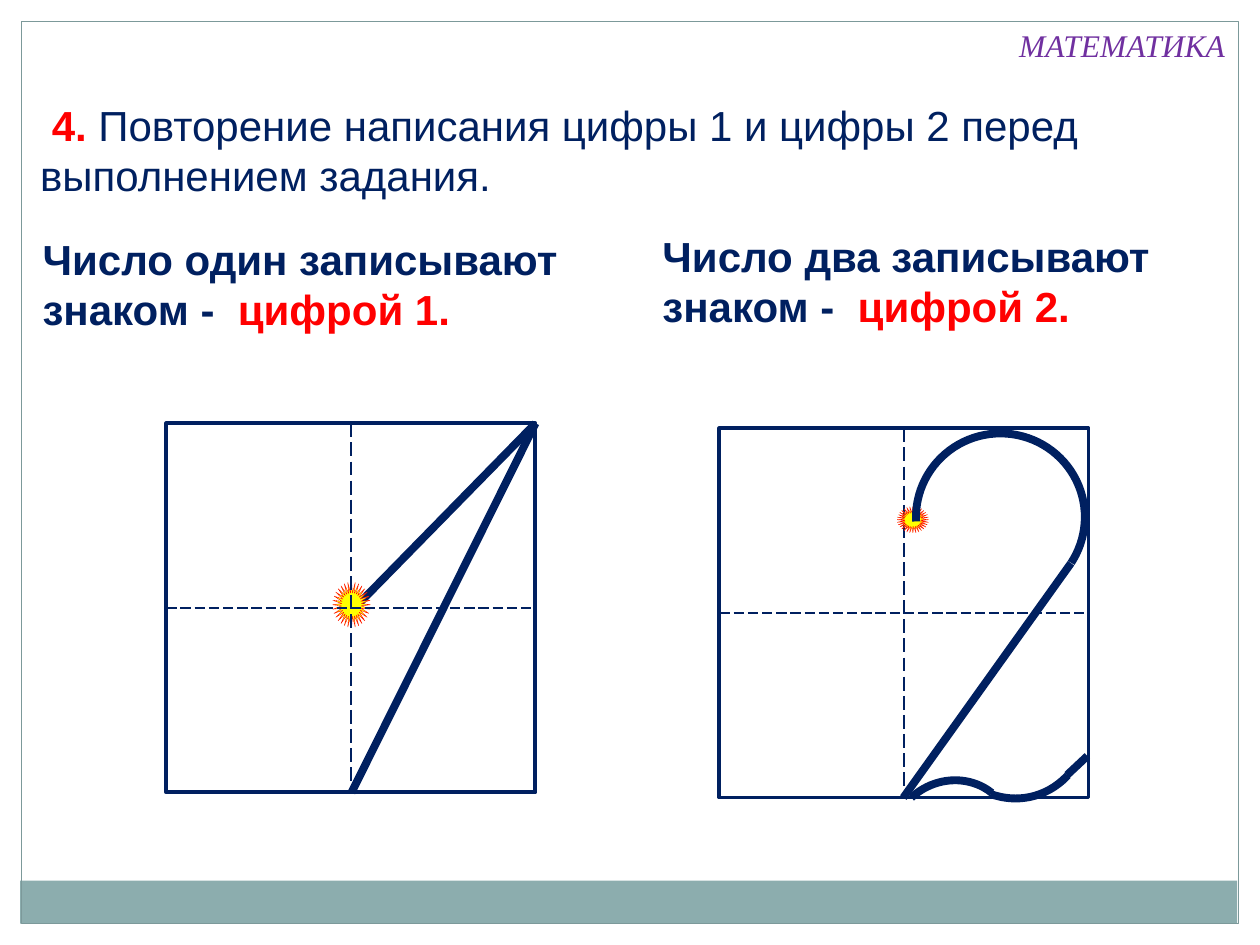
from pptx import Presentation
from pptx import util as u
from pptx.dml.color import RGBColor
from pptx.enum import dml, shapes, text
from pptx.oxml.ns import qn
from lxml import etree

COLS, ROWS = 100, 75
NAVY, RED, YELLOW, PURPLE = "002060", "FF0000", "FFFF00", "7030A0"
WHITE, TEAL, GREY = "FFFFFF", "8CADAE", "7C999A"
SHAPE = shapes.MSO_SHAPE
SIDE = 29.3  # side of a writing square


def rgb(value):
    return RGBColor.from_string(value)


def add_run(p, words, font="Arial", size=24, color=NAVY, bold=False, italic=False):
    r = p.add_run()
    r.text = words
    r.font.name, r.font.size = font, u.Pt(size)
    r.font.bold, r.font.italic = bold, italic
    r.font.color.rgb = rgb(color)


class Slide:
    """Places elements on a grid of COLS columns and ROWS rows."""

    def __init__(self, prs):
        self.s = prs.slides.add_slide(prs.slide_layouts[6])
        self.col = prs.slide_width / COLS
        self.row = prs.slide_height / ROWS

    def place(self, *lengths):
        return [round(n * (self.row if i % 2 else self.col))
                for i, n in enumerate(lengths)]

    def pen(self, line, color, width, dash=None):
        line.color.rgb = rgb(color)
        line.width = u.Pt(width)
        if dash:
            line.dash_style = dash

    def shape(self, kind, box, fill=None, line=None, width=1, dash=None, rot=0, adj=()):
        sp = self.s.shapes.add_shape(kind, *self.place(*box))
        sp.shadow.inherit = False
        sp.rotation = rot
        for i, value in enumerate(adj):
            sp.adjustments[i] = value
        if fill:
            sp.fill.solid()
            sp.fill.fore_color.rgb = rgb(fill)
        else:
            sp.fill.background()
        if line:
            self.pen(sp.line, line, width, dash)
        else:
            sp.line.fill.background()
        return sp

    def line(self, start, end, width=4.5, dash=None):
        cx = self.s.shapes.add_connector(
            shapes.MSO_CONNECTOR.STRAIGHT, *self.place(*start, *end))
        self.pen(cx.line, NAVY, width, dash)
        etree.SubElement(cx._element.spPr, qn("a:effectLst"))
        return cx

    def text(self, box, *runs, wrap=True):
        tf = self.s.shapes.add_textbox(*self.place(*box)).text_frame
        tf.word_wrap = wrap
        tf.auto_size = text.MSO_AUTO_SIZE.SHAPE_TO_FIT_TEXT
        for words, style in runs:
            add_run(tf.paragraphs[0], words, **style)

    def square(self, x, y):
        """Writing square with dashed axes joined to its sides."""
        frame = self.shape(SHAPE.RECTANGLE, (x, y, SIDE, SIDE), line=NAVY, width=2.25)
        mid_x, mid_y = x + SIDE / 2, y + SIDE / 2
        axes = (((mid_x, y), (mid_x, y + SIDE), 1, 0, 2),
                ((x, mid_y), (x + SIDE, mid_y), 0.75, 1, 3))
        for start, end, width, first, last in axes:
            cx = self.line(start, end, width, dml.MSO_LINE.LONG_DASH)
            cx.begin_connect(frame, first)
            cx.end_connect(frame, last)

    def sun(self, *box):
        self.shape(SHAPE.STAR_32_POINT, box, YELLOW, RED, 0.25,
                   dml.MSO_LINE.SQUARE_DOT, adj=[0.26])

    def arc(self, box, rot, start, end):
        """Arc between two angles in degrees, clockwise."""
        self.shape(SHAPE.ARC, box, line=NAVY, width=4.5, rot=rot,
                   adj=[start * 0.6, end * 0.6])


def main():
    prs = Presentation()
    prs.slide_width, prs.slide_height = u.Inches(10), u.Inches(7.5)
    s = Slide(prs)

    # Page frame
    for box in ((0, 0, 100, 1.7), (98.3, 0, 1.7, 75), (0, 0, 1.7, 75)):
        s.shape(SHAPE.RECTANGLE, box, WHITE)
    s.shape(SHAPE.RECTANGLE, (1.6, 69.9, 96.6, 3.4), TEAL)
    s.shape(SHAPE.RECTANGLE, (1.7, 1.7, 96.6, 71.6), line=GREY, width=0.75)

    # Headings
    s.text((2.2, 7.4, 89.5, 9.1), (" ", {}), ("4. ", dict(color=RED, bold=True)),
           ("Повторение написания цифры 1 и цифры 2 перед выполнением задания.", {}))
    s.text((79.9, 1.6, 18.5, 4),
           ("МАТЕМАТИКА", dict(font="Times New Roman", size=18, color=PURPLE, italic=True)),
           wrap=False)
    for box, number, digit in (((2.4, 18, 43.3, 9.1), "один", 1),
                               ((51.6, 17.8, 44.4, 9.1), "два", 2)):
        s.text(box, (f"Число {number} записывают знаком -  ", dict(bold=True)),
               (f"цифрой {digit}.", dict(color=RED, bold=True)))

    # Digit 2
    s.square(57.1, 34)
    s.sun(71.2, 40.2, 2.5, 2.1)
    s.arc((72.7, 34.4, 13.4, 13.3), 356.5, 180.6, 36.31)
    s.line((85, 44.7), (71.7, 63.3))
    s.arc((74.1, 49.5, 12.4, 13.9), 167.7, 241.1, 296.67)
    s.arc((70.7, 62, 9.7, 9.1), 330.4, 254.91, 340.88)
    s.line((84.7, 61.5), (86.3, 60))

    # Digit 1
    s.line((28.2, 48.2), (42.5, 33.6))
    s.line((42.5, 33.6), (27.9, 62.9))
    s.sun(26.4, 46.2, 3, 3.6)
    s.square(13.2, 33.6)

    prs.save("out.pptx")


if __name__ == "__main__":
    main()
